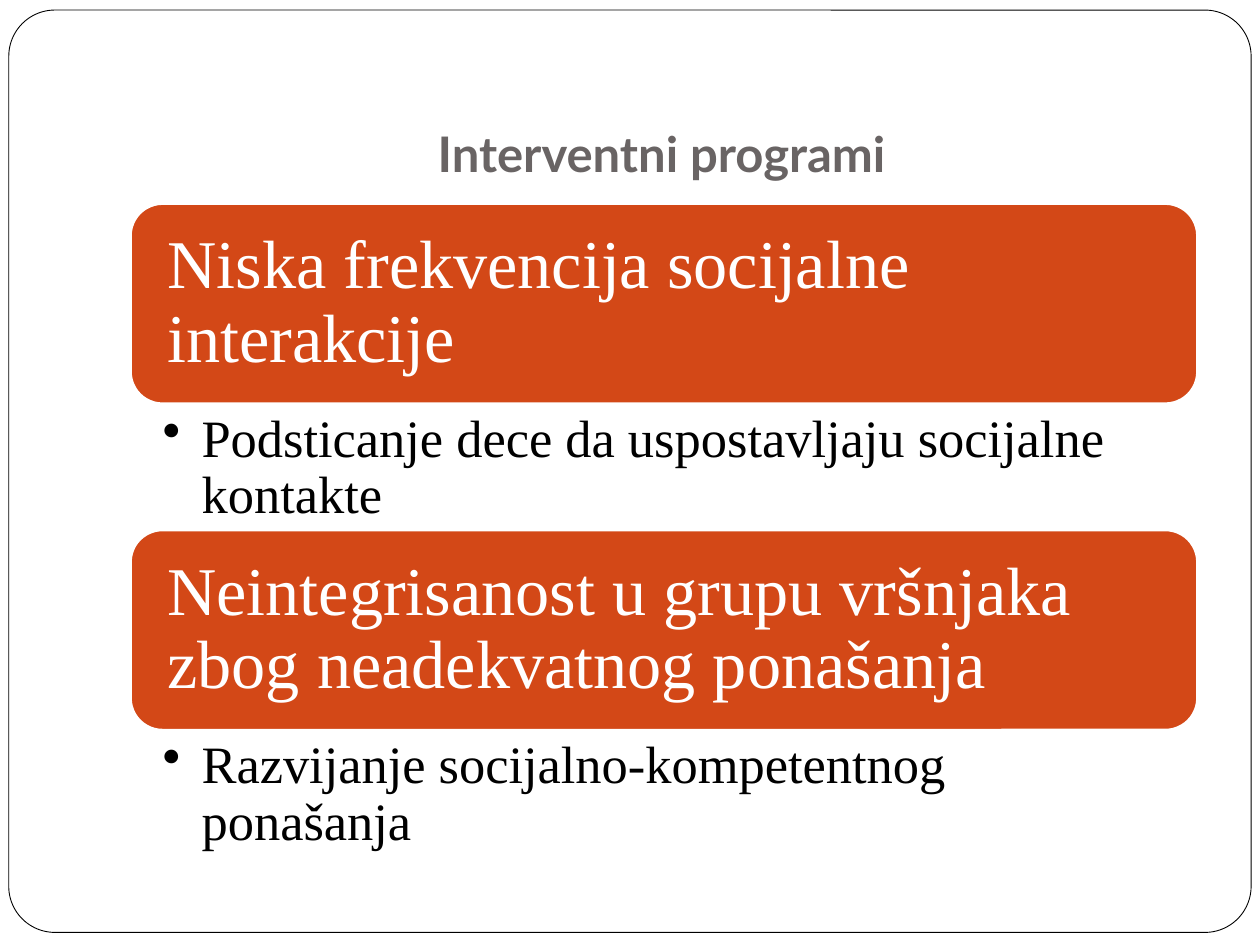
from pptx import Presentation
from pptx.dml.color import RGBColor
from pptx.enum.shapes import MSO_SHAPE
from pptx.enum.text import MSO_ANCHOR, PP_ALIGN
from pptx.oxml.ns import qn
from pptx.util import Inches, Pt
from lxml import etree

ROUND = MSO_SHAPE.ROUNDED_RECTANGLE
LEFT, CENTER = PP_ALIGN.LEFT, PP_ALIGN.CENTER
TOP, MIDDLE, BOTTOM = MSO_ANCHOR.TOP, MSO_ANCHOR.MIDDLE, MSO_ANCHOR.BOTTOM
SERIF = "Times New Roman"

COL, WIDE = 1.02, 8.5
START, STEP, BAR = 1.6, 2.59, 1.62
TOPICS = [
    ("Niska frekvencija socijalne interakcije",
     "Podsticanje dece da uspostavljaju socijalne kontakte", 0.97),
    ("Neintegrisanost u grupu vršnjaka zbog neadekvatnog ponašanja",
     "Razvijanje socijalno-kompetentnog ponašanja", 0.71),
]


def color(code):
    return RGBColor.from_string(code)


def panel(slide, box, fill, line, width, bend):
    """Add a rounded box; bend is the corner share of its short side."""
    shape = slide.shapes.add_shape(ROUND, *map(Inches, box))
    shape.adjustments[0] = bend
    shape.shadow.inherit = False
    shape.fill.solid()
    shape.fill.fore_color.rgb = color(fill)
    shape.line.color.rgb = color(line)
    shape.line.width = Pt(width)
    return shape


def write(shape, text, size, font, ink, pads, anchor=TOP, align=LEFT):
    """Fill a shape with one paragraph; pads run left, top, right, bottom."""
    frame = shape.text_frame
    frame.word_wrap = True
    frame.vertical_anchor = anchor
    (frame.margin_left, frame.margin_top,
     frame.margin_right, frame.margin_bottom) = map(Inches, pads)
    para = frame.paragraphs[0]
    para.text = text
    para.alignment = align
    para.font.size = Pt(size)
    para.font.name = font
    para.font.color.rgb = color(ink)
    return para


def bullet(para, indent):
    props = para._p.get_or_add_pPr()
    props.set("marL", str(Inches(indent)))
    props.set("indent", str(-Inches(indent)))
    mark = etree.Element(qn("a:buChar"), char="•")
    props.insert_element_before(mark, "a:tabLst", "a:defRPr", "a:extLst")


def title(slide, text):
    box = slide.shapes.add_textbox(*map(Inches, (1, 0.3, WIDE, 1.25)))
    para = write(box, text, 28, "Lato", "696464",
                 (0.1, 0.05, 0.1, 0.1), BOTTOM, CENTER)
    para.font.bold = True


def topic(slide, top, head, note, tall):
    bar = panel(slide, (COL, top, WIDE, BAR), "D34817", "FFFFFF", 3.78, 0.167)
    para = write(bar, head, 39, SERIF, "FFFFFF", (0.23,) * 4, MIDDLE)
    para.line_spacing = 0.9

    box = slide.shapes.add_textbox(
        *map(Inches, (COL, top + BAR, WIDE, tall)))
    para = write(box, note, 30, SERIF, "000000", (0.27, 0.05, 0.3, 0.05))
    para.line_spacing = 0.9
    bullet(para, 0.31)


def main():
    deck = Presentation()
    deck.slide_width, deck.slide_height = Inches(10), Inches(7.5)
    slide = deck.slides.add_slide(deck.slide_layouts[6])
    panel(slide, (0.07, 0.08, 9.86, 7.32), "FFFFFF", "000000", 0.5, 0.05)
    title(slide, "Interventni programi")
    for row, (head, note, tall) in enumerate(TOPICS):
        topic(slide, START + row * STEP, head, note, tall)
    deck.save("out.pptx")


if __name__ == "__main__":
    main()
